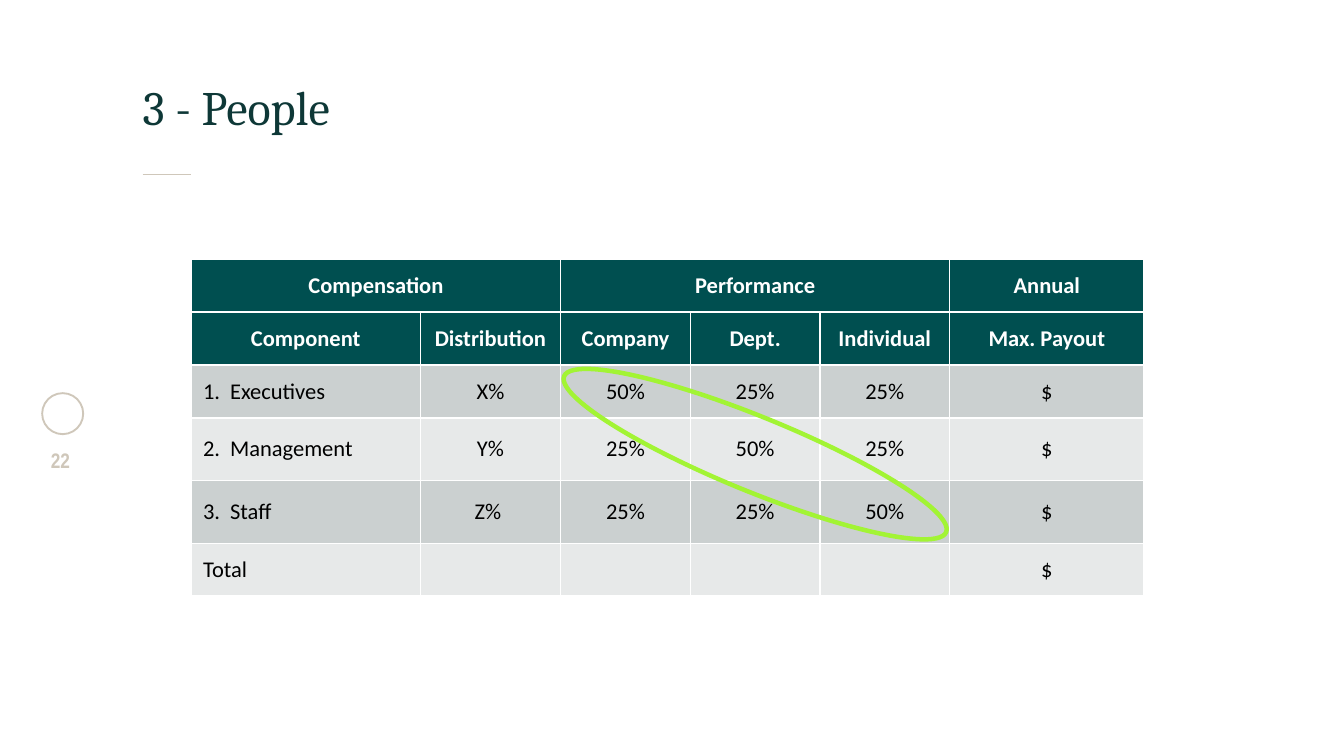
import pptx
import pptx.dml.color
import pptx.enum.shapes
import pptx.enum.text
import pptx.oxml
import pptx.oxml.ns
import pptx.util
from lxml import etree

Inches, Pt = pptx.util.Inches, pptx.util.Pt
ALIGN, ANCHOR = pptx.enum.text.PP_ALIGN, pptx.enum.text.MSO_ANCHOR
OVAL = pptx.enum.shapes.MSO_SHAPE.OVAL
qn = pptx.oxml.ns.qn


def rgb(value):
    return pptx.dml.color.RGBColor.from_string(value)


def style(p, size, name, color, bold=False, align=ALIGN.LEFT):
    p.alignment = align
    p.font.size, p.font.name, p.font.bold = Pt(size), name, bold
    p.font.color.rgb = rgb(color)


prs = pptx.Presentation()
prs.slide_width, prs.slide_height = Inches(12.44), Inches(7)
s = prs.slides.add_slide(prs.slide_layouts[5])
margin = 1.32

# Title with a short rule below it
title = s.shapes.title
title.left, title.top = Inches(margin), Inches(0.5)
title.width, title.height = Inches(10.28), Inches(0.75)
tf = title.text_frame
tf.text = "3 - People"
tf.vertical_anchor = ANCHOR.BOTTOM
tf.margin_left = tf.margin_right = tf.margin_top = tf.margin_bottom = 0
style(tf.paragraphs[0], 32, "Cambria", "0E3837")

rule = s.shapes.add_connector(
    pptx.enum.shapes.MSO_CONNECTOR.STRAIGHT,
    Inches(margin), Inches(1.62), Inches(margin + 0.45), Inches(1.62))
rule.line.color.rgb = rgb("CFC7BA")
rule.line.width = Pt(0.75)
etree.SubElement(rule.element.spPr, qn("a:effectLst"))

# Side badge and page number
badge = s.shapes.add_shape(OVAL, Inches(0.39), Inches(3.64), Inches(0.38), Inches(0.38))
badge.shadow.inherit = False
badge.fill.background()
badge.line.color.rgb = rgb("CFC7BA")
badge.line.width = Pt(1.25)

number = s.shapes.add_textbox(Inches(0.35), Inches(4.14), Inches(0.42), Inches(0.38))
tf = number.text_frame
tf.word_wrap = True
tf.margin_left = tf.margin_right = tf.margin_top = tf.margin_bottom = 0
tf.text = "22"
style(tf.paragraphs[0], 14, "Arial Narrow", "CFC7BA", True, ALIGN.CENTER)

# Compensation table
left, top = 1.77, 2.4
cols = [2.12, 1.3, 1.2, 1.2, 1.2, 1.8]
rows = [0.49, 0.49, 0.49, 0.58, 0.58, 0.49]
cells = [
    ["Compensation", "", "Performance", "", "", "Annual"],
    ["Component", "Distribution", "Company", "Dept.", "Individual", "Max. Payout"],
    ["Executives", "X%", "50%", "25%", "25%", "$"],
    ["Management", "Y%", "25%", "50%", "25%", "$"],
    ["Staff", "Z% ", "25%", "25%", "50%", "$"],
    ["Total", "", "", "", "", "$"],
]
fills = ["004F50", "004F50", "CBD0D0", "E7E9E9", "CBD0D0", "E7E9E9"]
table = s.shapes.add_table(len(rows), len(cols), Inches(left), Inches(top),
                           Inches(sum(cols)), Inches(sum(rows))).table
for column, width in zip(table.columns, cols):
    column.width = Inches(width)
for row, height in zip(table.rows, rows):
    row.height = Inches(height)

for i, texts in enumerate(cells):
    header = i < 2
    for j, text in enumerate(texts):
        cell = table.cell(i, j)
        cell.text = text
        cell.vertical_anchor = ANCHOR.MIDDLE
        cell.margin_left = cell.margin_right = Inches(0.11)
        cell.margin_top = cell.margin_bottom = Inches(0.04)
        cell.fill.solid()
        cell.fill.fore_color.rgb = rgb(fills[i])
        p = cell.text_frame.paragraphs[0]
        style(p, 15, "Calibri", "FFFFFF" if header else "000000", header,
              ALIGN.CENTER if header or j else ALIGN.LEFT)
        if j == 0 and 2 <= i <= 4:
            pPr = p._p.get_or_add_pPr()
            pPr.set("marL", str(Inches(0.25)))
            pPr.set("indent", str(Inches(-0.25)))
            pPr.insert(0, pptx.oxml.parse_xml(
                f'<a:buAutoNum {pptx.oxml.ns.nsdecls("a")} '
                f'type="arabicPeriod" startAt="{i - 1}"/>'))
        for k, side in enumerate("LRTB"):
            cell._tc.get_or_add_tcPr().insert(k, pptx.oxml.parse_xml(
                f'<a:ln{side} {pptx.oxml.ns.nsdecls("a")} w="{Pt(1)}"><a:solidFill>'
                f'<a:srgbClr val="FFFFFF"/></a:solidFill></a:ln{side}>'))
table.cell(0, 0).merge(table.cell(0, 1))
table.cell(0, 2).merge(table.cell(0, 4))

# Tilted ellipse around the diagonal of 50% shares
width, height = 3.82, 0.69
center_x = left + sum(cols[:2]) + sum(cols[2:5]) / 2
center_y = top + sum(rows[:2]) + sum(rows[2:5]) / 2
ring = s.shapes.add_shape(OVAL, Inches(center_x - width / 2), Inches(center_y - height / 2),
                          Inches(width), Inches(height))
ring.rotation = 22.2
ring.shadow.inherit = False
ring.fill.background()
ring.line.color.rgb = rgb("A2F434")
ring.line.width = Pt(3)

prs.save("out.pptx")
